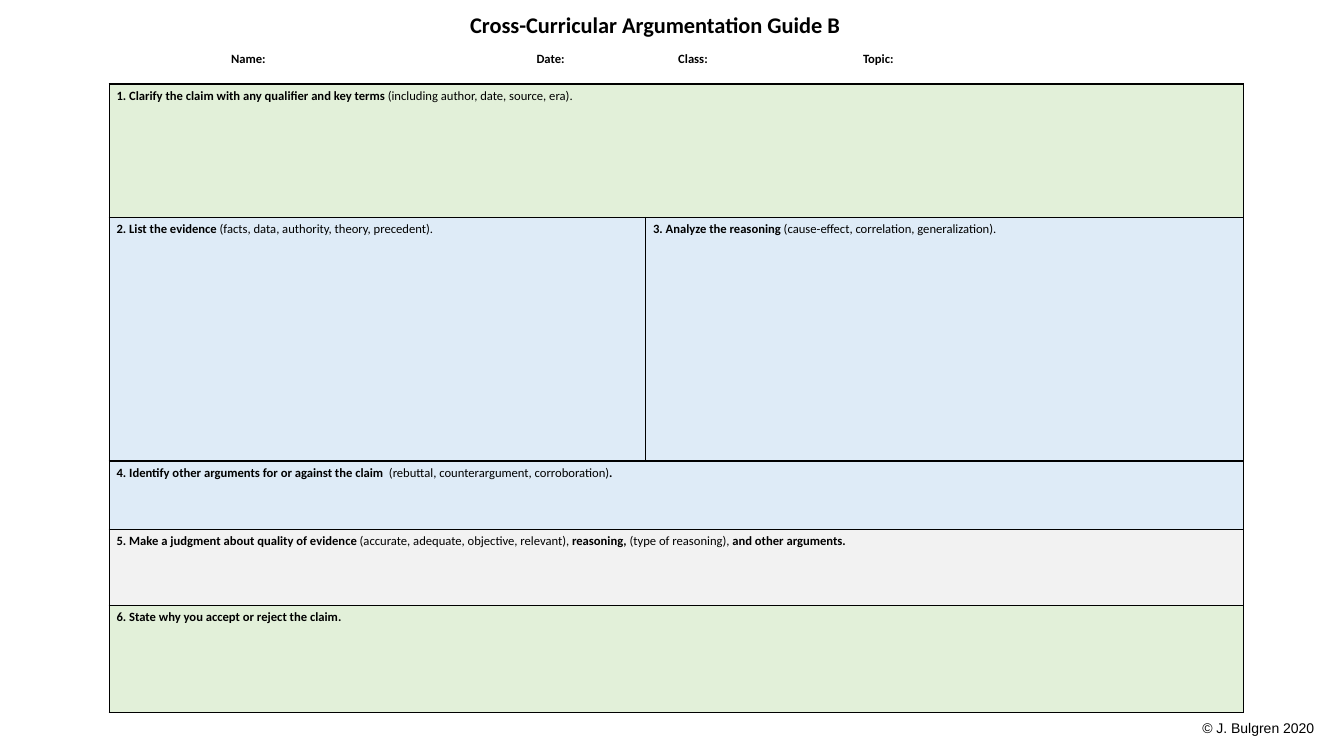
import pptx
import pptx.util
import pptx.dml.color
import pptx.enum.text
import lxml.etree
from dataclasses import dataclass
from pptx.oxml.ns import qn

SCALE = 9525
ALIGN = pptx.enum.text.PP_ALIGN
ANCHOR = pptx.enum.text.MSO_ANCHOR


def px(*nums):
    return [pptx.util.Emu(num * SCALE) for num in nums]


def apply(item, form):
    for name, value in form.items():
        setattr(item, name, value)


@dataclass(frozen=True)
class Theme:
    ink: str = "000000"
    green: str = "E2F0D9"
    blue: str = "DEEBF7"
    grey: str = "F2F2F2"
    main: str = "Calibri"
    foot: str = "Arial"
    head: int = 16
    body: int = 9
    note: int = 10
    rule: int = 1


class Page:
    def __init__(self, deck, theme):
        self.theme = theme
        self.slide = deck.slides.add_slide(deck.slide_layouts[5])

    def text(self, frame, runs, size, face, align=ALIGN.LEFT):
        para = frame.paragraphs[0]
        para.alignment = align
        for words, bold in runs:
            run = para.add_run()
            run.text = words
            apply(run.font, {"size": pptx.util.Pt(size), "name": face, "bold": bold})
            run.font.color.rgb = pptx.dml.color.RGBColor.from_string(self.theme.ink)

    def title(self, words, box):
        shape = self.slide.shapes.title
        apply(shape, dict(zip(("left", "top", "width", "height"), px(*box))))
        apply(shape.text_frame, {"word_wrap": True, "vertical_anchor": ANCHOR.TOP})
        self.text(shape.text_frame, [(words, True)], self.theme.head,
                  self.theme.main, ALIGN.CENTER)

    def label(self, words, box):
        frame = self.slide.shapes.add_textbox(*px(*box)).text_frame
        apply(frame, {"word_wrap": True, "vertical_anchor": ANCHOR.MIDDLE})
        self.text(frame, [(words, False)], self.theme.note, self.theme.foot, ALIGN.RIGHT)

    def grid(self, spot, cols, rows):
        box = px(*spot, sum(cols), sum(rows))
        table = self.slide.shapes.add_table(len(rows), len(cols), *box).table
        apply(table, {"first_row": False, "horz_banding": False})
        for col, width in zip(table.columns, px(*cols)):
            col.width = width
        for row, height in zip(table.rows, px(*rows)):
            row.height = height
        return table

    def cell(self, cell, runs, inset):
        left, top, right, bottom = px(inset, 4, 7, 4)
        apply(cell, {"margin_left": left, "margin_top": top,
                     "margin_right": right, "margin_bottom": bottom,
                     "vertical_anchor": ANCHOR.TOP})
        self.text(cell.text_frame, runs, self.theme.body, self.theme.main)

    def frame(self, cell):
        props = cell._tc.get_or_add_tcPr()
        for side in ("a:lnL", "a:lnR", "a:lnT", "a:lnB"):
            line = lxml.etree.SubElement(props, qn(side), w=str(self.theme.rule * 12700))
            fill = lxml.etree.SubElement(line, qn("a:solidFill"))
            lxml.etree.SubElement(fill, qn("a:srgbClr"), val=self.theme.ink)

    def fields(self, spot, cols, row, names):
        table = self.grid(spot, cols, [row])
        for cell, (words, inset) in zip(table.iter_cells(), names):
            cell.fill.background()
            self.cell(cell, [(words, True)], inset)

    def guide(self, spot, cols, steps):
        table = self.grid(spot, cols, [step[0] for step in steps])
        for row, (_, tint, texts) in enumerate(steps):
            cells = [table.cell(row, col) for col in range(len(cols))]
            for cell in cells:
                self.frame(cell)
                cell.fill.solid()
                cell.fill.fore_color.rgb = pptx.dml.color.RGBColor.from_string(tint)
            if len(texts) == 1:
                cells[0].merge(cells[-1])
            for cell, runs in zip(cells, texts):
                self.cell(cell, runs, 7)


def main():
    deck = pptx.Presentation()
    deck.slide_width, deck.slide_height = px(1280, 720)
    theme = Theme()
    page = Page(deck, theme)
    page.title("Cross-Curricular Argumentation Guide B", (282, 6, 684, 55))
    page.fields((213, 45), (243, 113, 145, 392), 21,
                [("Name:", 7), ("Date:", 55), ("Class:", 77), ("Topic:", 108)])
    steps = [
        (127, theme.green, [[
            ("1. Clarify the claim with any qualifier and key terms ", True),
            ("(including author, date, source, era).", False)]]),
        (232, theme.blue, [
            [("2. List the evidence ", True),
             ("(facts, data, authority, theory, precedent).", False)],
            [("3. Analyze the reasoning ", True),
             ("(cause-effect, correlation, generalization).", False)]]),
        (65, theme.blue, [[
            ("4. Identify other arguments for or against the claim  ", True),
            ("(rebuttal, counterargument, corroboration)", False),
            (".", True)]]),
        (73, theme.grey, [[
            ("5. Make a judgment about quality of evidence ", True),
            ("(accurate, adequate, objective, relevant), ", False),
            ("reasoning, ", True),
            ("(type of reasoning), ", False),
            ("and other arguments.", True)]]),
        (102, theme.green, [[
            ("6. State why you accept or reject the claim.", True)]]),
    ]
    page.guide((104, 80), (511, 569), steps)
    page.label("© J. Bulgren 2020", (1129, 679, 132, 29))
    deck.save("out.pptx")


if __name__ == "__main__":
    main()
